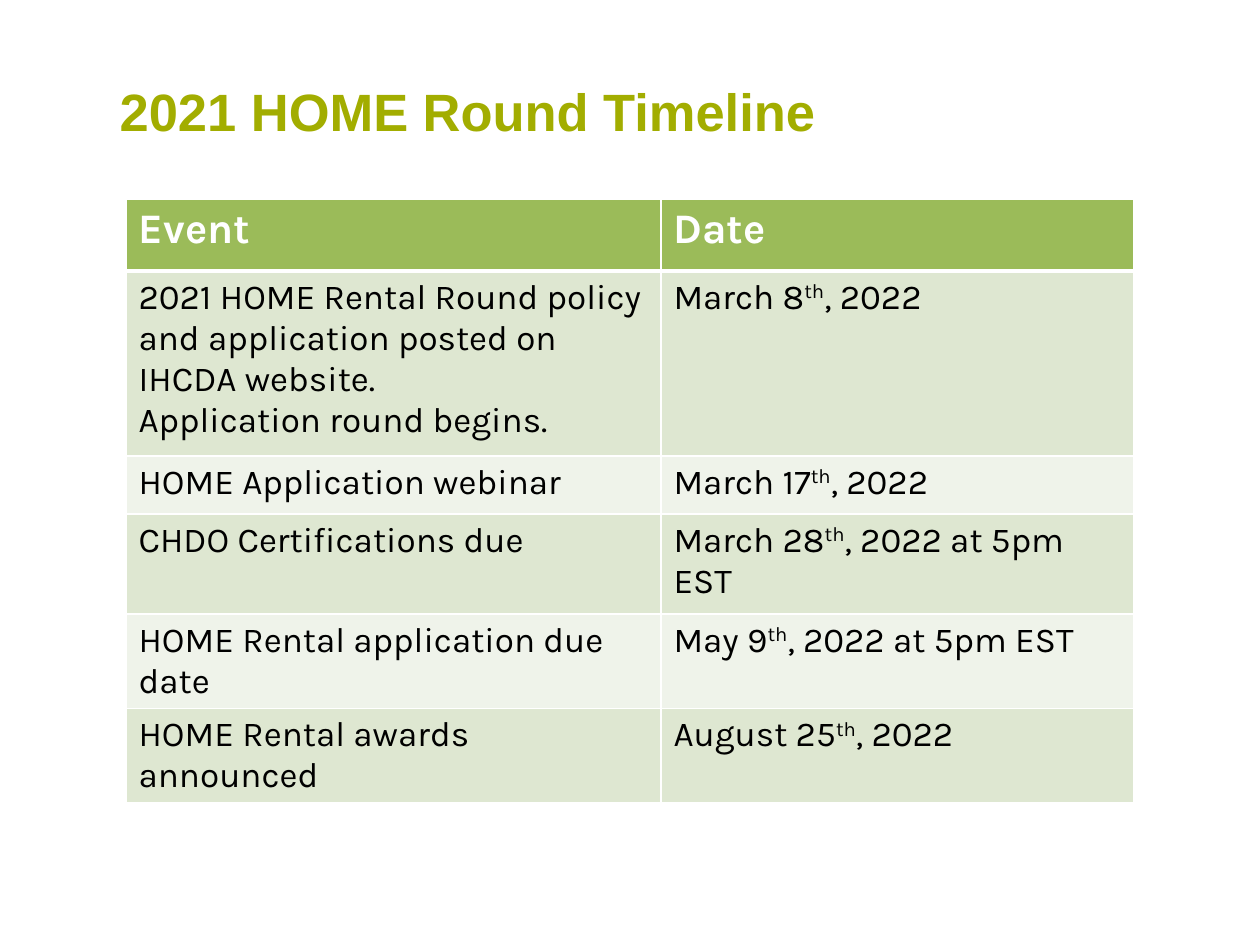
"""Build the HOME round timeline slide with its schedule table."""
from dataclasses import dataclass

from lxml.etree import SubElement
from pptx import Presentation
from pptx.dml.color import RGBColor
from pptx.enum.text import MSO_ANCHOR, MSO_AUTO_SIZE, PP_ALIGN
from pptx.oxml.ns import qn
from pptx.util import Pt

PX = 914400 / 126
PAGE_SIZE = (1260, 945)
TITLE = "2021 HOME Round Timeline"
TITLE_BOX = (107, 32, 1153, 157)
TABLE_ORIGIN = (126, 199)
COLUMN_WIDTHS = (535, 473)
ROW_HEIGHTS = (72, 185, 58, 100, 58, 58)
HEADER = ("Event", "Date")
EVENTS = [
    (["2021 HOME Rental Round policy and application posted on IHCDA website.",
      "Application round begins."], ("March 8", ", 2022")),
    (["HOME Application webinar"], ("March 17", ", 2022")),
    (["CHDO Certifications due"], ("March 28", ", 2022 at 5pm EST")),
    (["HOME Rental application due date"], ("May 9", ", 2022 at 5pm EST")),
    (["HOME Rental awards announced"], ("August 25", ", 2022")),
]
ORDINAL = "th"


@dataclass(frozen=True)
class Theme:
    title_font: str = "Arial"
    table_font: str = "Karla"
    title_size: int = 30
    header_size: int = 24
    body_size: int = 20
    title: str = "A2AD00"
    header: str = "9BBB59"
    bands: tuple = ("DEE7D1", "EFF3EA")
    light: str = "FFFFFF"
    dark: str = "000000"
    thin: int = 1
    thick: int = 3


THEME = Theme()


def emu(*lengths):
    return [round(length * PX) for length in lengths]


def add_span(para, text, font, size, color, bold=False, raised=False):
    span = para.add_run()
    span.text = text
    span.font.name = font
    span.font.size = Pt(size)
    span.font.bold = bold
    span.font.color.rgb = RGBColor.from_string(color)
    if raised:
        span.font._element.set("baseline", "30000")


def style_cell(cell, color, top, bottom):
    cell.fill.solid()
    cell.fill.fore_color.rgb = RGBColor.from_string(color)
    properties = cell._tc.get_or_add_tcPr()
    widths = {"lnL": THEME.thin, "lnR": THEME.thin, "lnT": top, "lnB": bottom}
    for position, (side, width) in enumerate(widths.items()):
        line = SubElement(properties, qn(f"a:{side}"), w=str(Pt(width)))
        fill = SubElement(line, qn("a:solidFill"))
        SubElement(fill, qn("a:srgbClr"), val=THEME.light)
        properties.insert(position, line)


def add_title(page):
    box = page.shapes.title
    box.left, box.top, box.width, box.height = emu(*TITLE_BOX)
    frame = box.text_frame
    frame.auto_size = MSO_AUTO_SIZE.NONE
    frame.vertical_anchor = MSO_ANCHOR.MIDDLE
    para = frame.paragraphs[0]
    para.alignment = PP_ALIGN.LEFT
    add_span(para, TITLE, THEME.title_font, THEME.title_size, THEME.title, bold=True)


def add_timeline(page):
    bounds = emu(*TABLE_ORIGIN, sum(COLUMN_WIDTHS), sum(ROW_HEIGHTS))
    table = page.shapes.add_table(len(ROW_HEIGHTS), len(COLUMN_WIDTHS), *bounds).table
    for column, width in zip(table.columns, emu(*COLUMN_WIDTHS)):
        column.width = width
    for row, height in zip(table.rows, emu(*ROW_HEIGHTS)):
        row.height = height

    for cell, label in zip(table.rows[0].cells, HEADER):
        style_cell(cell, THEME.header, THEME.thin, THEME.thick)
        add_span(cell.text_frame.paragraphs[0], label, THEME.table_font,
                 THEME.header_size, THEME.light, bold=True)

    body = (THEME.table_font, THEME.body_size, THEME.dark)
    for index, (lines, (day, rest)) in enumerate(EVENTS):
        event, date = table.rows[index + 1].cells
        for cell in (event, date):
            top = THEME.thin if index else THEME.thick
            style_cell(cell, THEME.bands[index % 2], top, THEME.thin)
        for number, line in enumerate(lines):
            frame = event.text_frame
            para = frame.add_paragraph() if number else frame.paragraphs[0]
            add_span(para, line, *body)
        para = date.text_frame.paragraphs[0]
        add_span(para, day, *body)
        add_span(para, ORDINAL, *body, raised=True)
        add_span(para, rest, *body)


def main():
    deck = Presentation()
    deck.slide_width, deck.slide_height = emu(*PAGE_SIZE)
    page = deck.slides.add_slide(deck.slide_layouts.get_by_name("Title Only"))
    add_title(page)
    add_timeline(page)
    deck.save("out.pptx")


if __name__ == "__main__":
    main()
